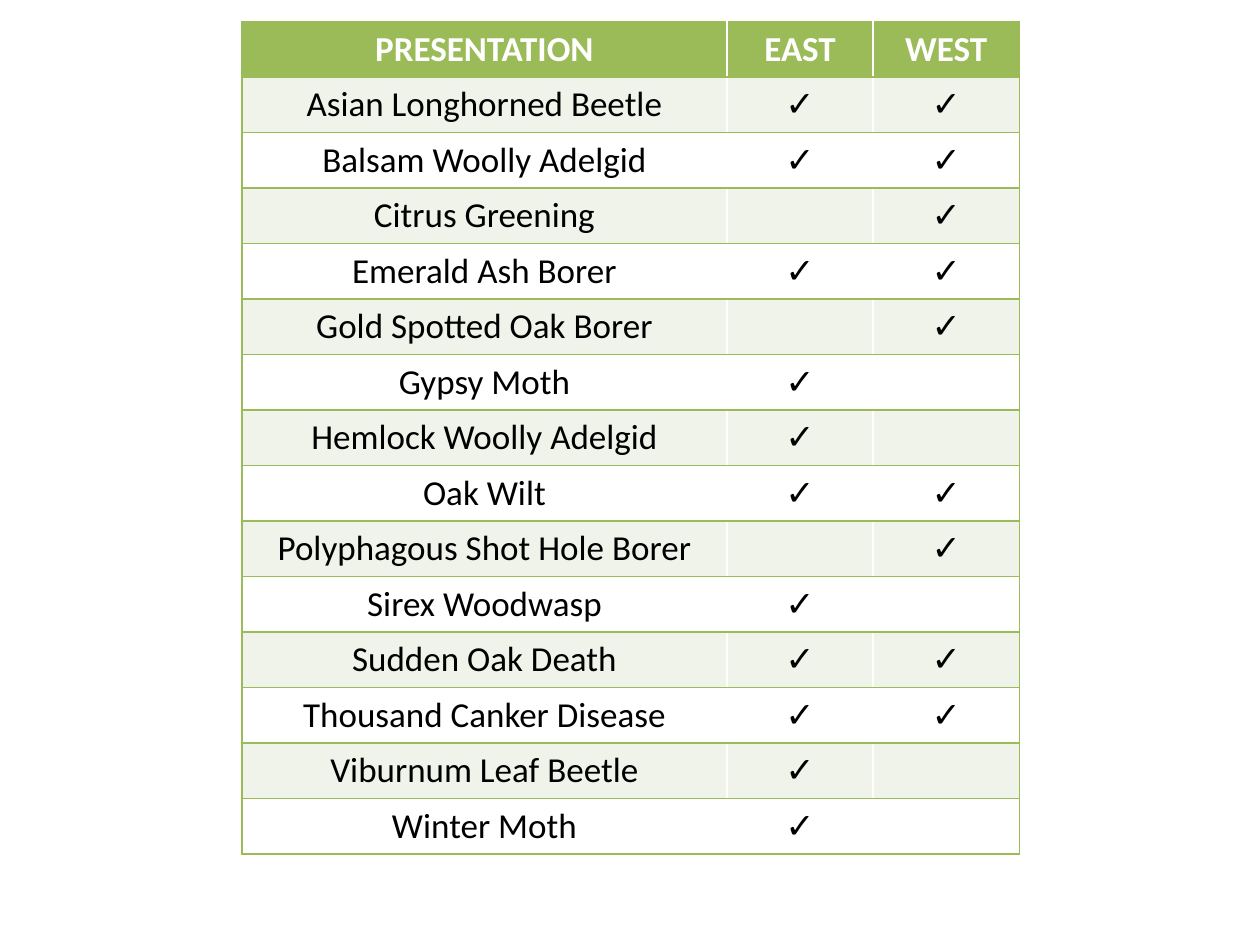
from dataclasses import dataclass

from lxml import etree
from pptx import Presentation
from pptx import util as u
from pptx.dml.color import RGBColor
from pptx.enum import text
from pptx.oxml.ns import qn


@dataclass(frozen=True)
class Theme:
    font: str = "Calibri"
    size: int = 20
    green: str = "9BBB59"
    band: str = "EFF3EA"
    white: str = "FFFFFF"
    black: str = "000000"


theme = Theme()

HEADINGS = ("PRESENTATION", "EAST", "WEST")
CHECK = "✓"
# Topic, shown in the east, shown in the west
TOPICS = [
    ("Asian Longhorned Beetle", True, True),
    ("Balsam Woolly Adelgid", True, True),
    ("Citrus Greening", False, True),
    ("Emerald Ash Borer", True, True),
    ("Gold Spotted Oak Borer", False, True),
    ("Gypsy Moth", True, False),
    ("Hemlock Woolly Adelgid", True, False),
    ("Oak Wilt", True, True),
    ("Polyphagous Shot Hole Borer", False, True),
    ("Sirex Woodwasp", True, False),
    ("Sudden Oak Death", True, True),
    ("Thousand Canker Disease", True, True),
    ("Viburnum Leaf Beetle", True, False),
    ("Winter Moth", True, False),
]
COLUMN_WIDTHS = (3.85, 1.16, 1.16)
ROW_HEIGHT = 0.41
# Only the outer sides and the lines between rows are drawn
COLUMN_BORDERS = (("lnL", "lnT", "lnB"), ("lnT", "lnB"), ("lnR", "lnT", "lnB"))


def add_borders(cell, sides):
    """Draw the given sides; call before filling, as lines precede the fill."""
    properties = cell._tc.get_or_add_tcPr()
    for side in sides:
        line = etree.SubElement(properties, qn(f"a:{side}"), w=str(u.Pt(1)))
        fill = etree.SubElement(line, qn("a:solidFill"))
        etree.SubElement(fill, qn("a:srgbClr"), val=theme.green)


deck = Presentation()
deck.slide_width, deck.slide_height = u.Inches(10), u.Inches(7.5)
page = deck.slides.add_slide(deck.slide_layouts[6])

rows = [HEADINGS]
for topic, *regions in TOPICS:
    rows.append((topic, *(CHECK if shown else "" for shown in regions)))

frame = page.shapes.add_table(
    len(rows), len(HEADINGS),
    u.Inches(1.92), u.Inches(0.17), u.Inches(6.17), u.Inches(6.5),
)
table = frame.table
for column, width in zip(table.columns, COLUMN_WIDTHS):
    column.width = u.Inches(width)

for row_index, values in enumerate(rows):
    table.rows[row_index].height = u.Inches(ROW_HEIGHT)
    is_header = row_index == 0
    if is_header:
        background = theme.green
    else:
        background = theme.band if row_index % 2 else theme.white

    for column_index, value in enumerate(values):
        cell = table.cell(row_index, column_index)
        add_borders(cell, COLUMN_BORDERS[column_index])
        cell.fill.solid()
        cell.fill.fore_color.rgb = RGBColor.from_string(background)
        cell.text_frame.text = value
        para = cell.text_frame.paragraphs[0]
        para.alignment = text.PP_ALIGN.CENTER
        for span in para.runs:
            span.font.name = theme.font
            span.font.size = u.Pt(theme.size)
            span.font.bold = is_header
            span.font.color.rgb = RGBColor.from_string(
                theme.white if is_header else theme.black
            )

# Row heights reset the frame, so its height is set last
frame.height = u.Inches(6.5)

deck.save("out.pptx")
